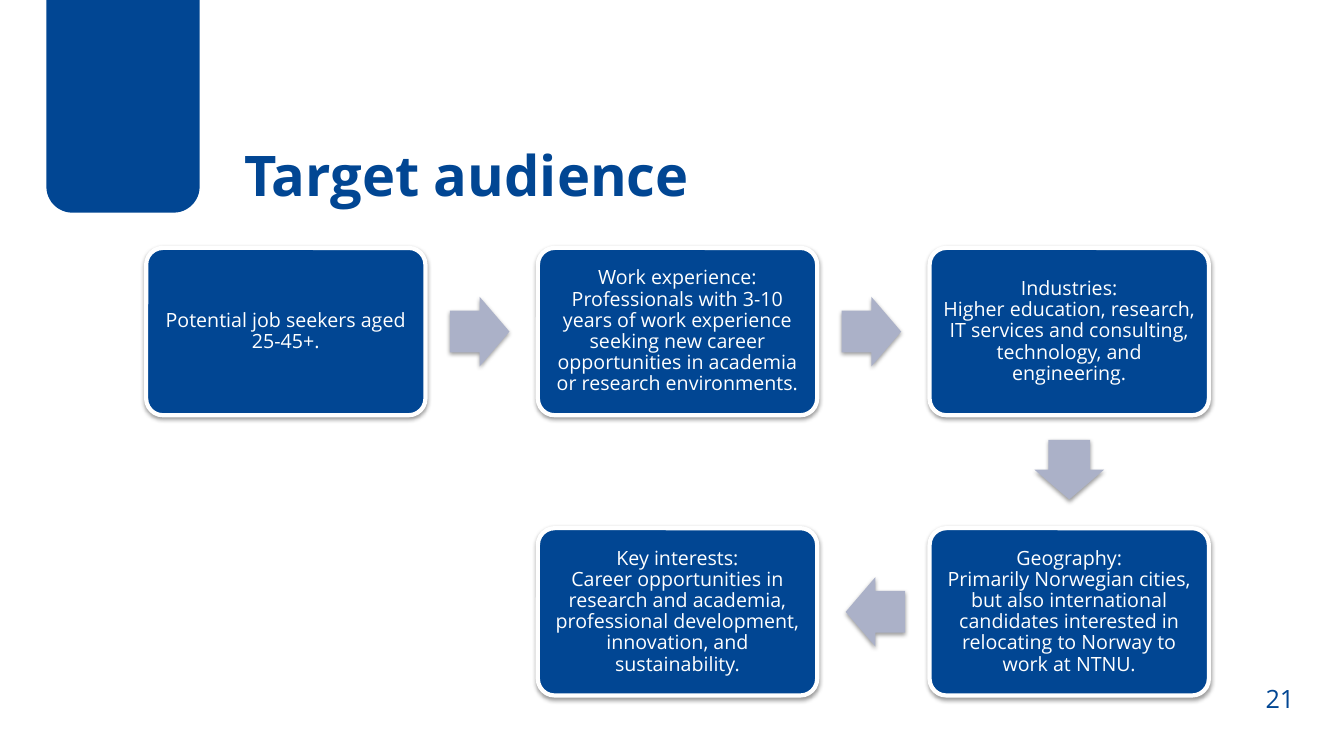
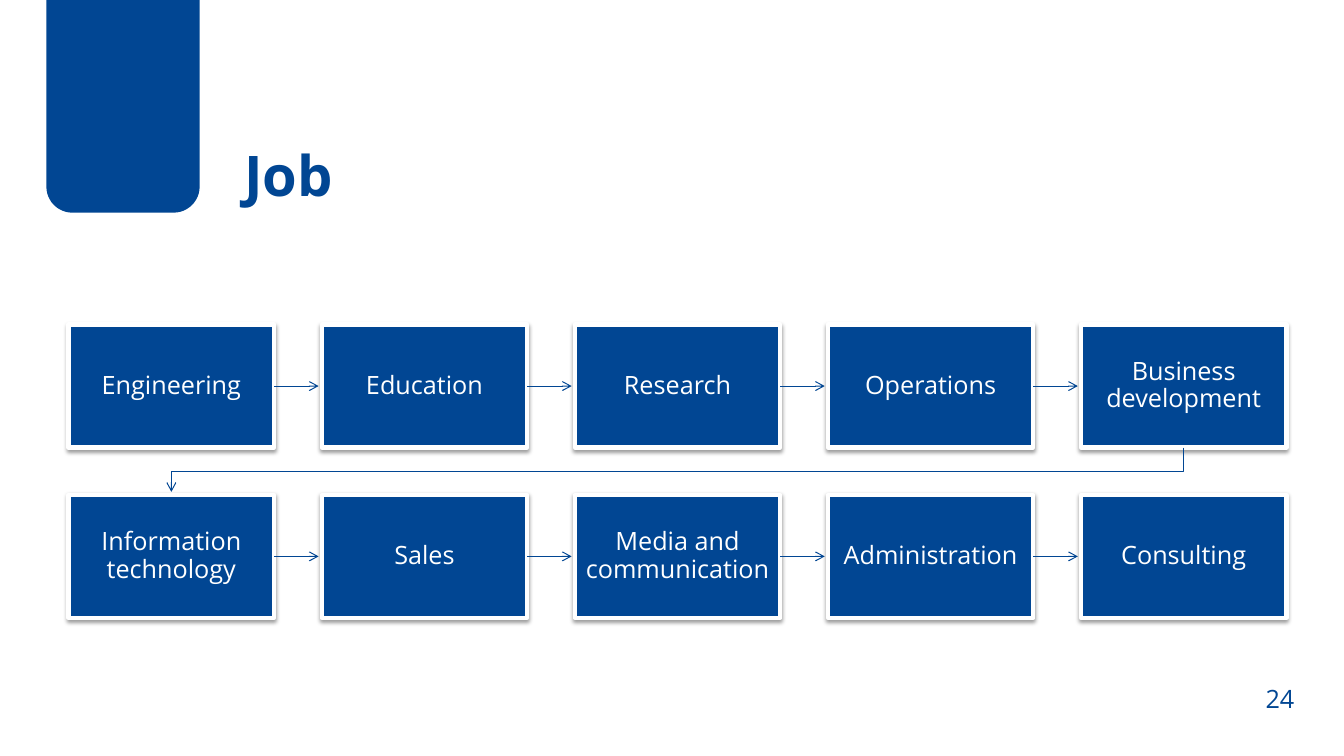
from dataclasses import dataclass

from lxml import etree
from pptx import Presentation
from pptx import util as u
from pptx.dml.color import RGBColor
from pptx.enum import shapes, text
from pptx.oxml import ns
from pptx.shapes.autoshape import Shape
from pptx.slide import Slide


@dataclass(frozen=True)
class Theme:
    blue: RGBColor = RGBColor(0x01, 0x46, 0x93)
    grey: RGBColor = RGBColor(0xAB, 0xB1, 0xC8)
    white: RGBColor = RGBColor(0xFF, 0xFF, 0xFF)
    font: str = "Open Sans"
    title_size: int = 40
    label_size: int = 18
    body_size: int = 14
    border: float = 3
    thin_line: float = 0.75


@dataclass(frozen=True)
class Box:
    """A rectangle in inches."""
    left: float
    top: float
    width: float
    height: float

    @property
    def center(self) -> tuple[float, float]:
        return self.left + self.width / 2, self.top + self.height / 2

    def lengths(self) -> tuple[u.Length, ...]:
        return tuple(u.Inches(v) for v in (self.left, self.top, self.width, self.height))


@dataclass(frozen=True)
class Step:
    col: int
    row: int
    words: str


@dataclass(frozen=True)
class Grid:
    """Equal boxes at equal steps across and down."""
    first: Box
    step_x: float
    step_y: float

    def cell(self, col: int, row: int) -> Box:
        return Box(self.first.left + col * self.step_x, self.first.top + row * self.step_y,
                   self.first.width, self.first.height)


THEME = Theme()
TITLE = Box(2.32, 0.45, 10.45, 1.66)
TAB = Box(0.46, 0, 1.52, 2.11)
PAGE_NUMBER = Box(12.37, 6.73, 0.65, 0.4)

AUDIENCE_GRID = Grid(Box(1.45, 2.46, 2.77, 1.66), 3.885, 2.78)
AUDIENCE = (
    Step(0, 0, "Potential job seekers aged 25-45+."),
    Step(1, 0, "Work experience:\nProfessionals with 3-10 years of work experience seeking "
               "new career opportunities in academia or research environments."),
    Step(2, 0, "Industries:\nHigher education, research, IT services and consulting, "
               "technology, and engineering."),
    Step(2, 1, "Geography:\nPrimarily Norwegian cities, but also international candidates "
               "interested in relocating to Norway to work at NTNU."),
    Step(1, 1, "Key interests:\nCareer opportunities in research and academia, "
               "professional development, innovation, and sustainability."),
)
ARROW_WIDTH, ARROW_HEIGHT, ARROW_LAG = 0.59, 0.69, 0.02

JOB_GRID = Grid(Box(0.68, 3.22, 2.04, 1.22), 2.51, 1.69)
JOB_ROWS = (
    ("Engineering", "Education", "Research", "Operations", "Business development"),
    ("Information technology", "Sales", "Media and communication", "Administration",
     "Consulting"),
)
TIP_GAP = 0.03  # space between an arrow tip and the next box


# Shared helpers
def add_shadow(sp: Shape) -> None:
    sp.shadow.inherit = False
    effects = sp._element.spPr.find(ns.qn("a:effectLst"))
    shadow = etree.SubElement(effects, ns.qn("a:outerShdw"), blurRad="40000", dist="20000",
                              dir="5400000", rotWithShape="0")
    color = etree.SubElement(shadow, ns.qn("a:srgbClr"), val="000000")
    etree.SubElement(color, ns.qn("a:alpha"), val="38000")


def add_filled(s: Slide, kind: shapes.MSO_SHAPE, box: Box, color: RGBColor) -> Shape:
    sp = s.shapes.add_shape(kind, *box.lengths())
    sp.shadow.inherit = False
    sp.fill.solid()
    sp.fill.fore_color.rgb = color
    sp.line.fill.background()
    return sp


def write(sp: Shape, words: str, size: int, color: RGBColor,
          align: text.PP_ALIGN = text.PP_ALIGN.CENTER, bold: bool = False):
    tf = sp.text_frame
    tf.word_wrap = True
    p = tf.paragraphs[0]
    p.text = words
    p.alignment = align
    p.font.name = THEME.font
    p.font.size = u.Pt(size)
    p.font.bold = bold
    p.font.color.rgb = color
    return p


def add_card(s: Slide, kind: shapes.MSO_SHAPE, box: Box, words: str, size: int,
             inset: float) -> Shape:
    sp = add_filled(s, kind, box, THEME.blue)
    sp.line.color.rgb = THEME.white
    sp.line.width = u.Pt(THEME.border)
    add_shadow(sp)
    tf = sp.text_frame
    tf.margin_left = tf.margin_right = tf.margin_top = tf.margin_bottom = u.Inches(inset)
    tf.vertical_anchor = text.MSO_ANCHOR.MIDDLE
    write(sp, words, size, THEME.white).line_spacing = 0.9
    return sp


def style_arrow_line(line_shape) -> None:
    line_shape.line.color.rgb = THEME.blue
    line_shape.line.width = u.Pt(THEME.thin_line)
    etree.SubElement(line_shape.line._get_or_add_ln(), ns.qn("a:tailEnd"), type="arrow")


def add_page(prs, title: str, number: int) -> Slide:
    s = prs.slides.add_slide(prs.slide_layouts[5])
    # Blue tab hanging from the top edge
    tab = add_filled(s, shapes.MSO_SHAPE.ROUND_2_SAME_RECTANGLE, TAB, THEME.blue)
    tab.adjustments[0], tab.adjustments[1] = 0, 0.17
    # Title
    sp = s.shapes.title
    sp.left, sp.top, sp.width, sp.height = TITLE.lengths()
    sp.text_frame.vertical_anchor = text.MSO_ANCHOR.BOTTOM
    sp.text_frame.auto_size = text.MSO_AUTO_SIZE.NONE
    write(sp, title, THEME.title_size, THEME.blue, text.PP_ALIGN.LEFT, bold=True)
    # Page number
    write(s.shapes.add_textbox(*PAGE_NUMBER.lengths()), str(number), THEME.label_size,
          THEME.blue)
    return s


# Target audience
def add_block_arrow(s: Slide, start: Box, end: Box) -> None:
    (x1, y1), (x2, y2) = start.center, end.center
    if abs(x2 - x1) > abs(y2 - y1):
        dx, dy, angle = (1, 0, 0) if x2 > x1 else (-1, 0, 180)
    else:
        dx, dy, angle = 0, 1, 90
    x = (x1 + x2) / 2 - ARROW_LAG * dx
    y = (y1 + y2) / 2 - ARROW_LAG * dy
    arrow = add_filled(s, shapes.MSO_SHAPE.RIGHT_ARROW,
                       Box(x - ARROW_WIDTH / 2, y - ARROW_HEIGHT / 2,
                           ARROW_WIDTH, ARROW_HEIGHT), THEME.grey)
    arrow.adjustments[0], arrow.adjustments[1] = 0.6, 0.5
    arrow.rotation = angle
    add_shadow(arrow)


def build_audience(prs) -> None:
    s = add_page(prs, "Target audience", 21)
    boxes = [AUDIENCE_GRID.cell(step.col, step.row) for step in AUDIENCE]
    for step, box in zip(AUDIENCE, boxes):
        card = add_card(s, shapes.MSO_SHAPE.ROUNDED_RECTANGLE, box, step.words,
                        THEME.body_size, 0.06)
        card.adjustments[0] = 0.1
    for start, end in zip(boxes, boxes[1:]):
        add_block_arrow(s, start, end)


# Job
def add_link(s: Slide, card: Shape, start: Box, end: Box) -> None:
    y = u.Inches(start.center[1])
    link = s.shapes.add_connector(shapes.MSO_CONNECTOR.STRAIGHT,
                                  u.Inches(start.left + start.width), y,
                                  u.Inches(end.left - TIP_GAP), y)
    link.begin_connect(card, 3)
    style_arrow_line(link)
    etree.SubElement(link._element.spPr, ns.qn("a:effectLst"))


def add_return_line(s: Slide, start: Box, end: Box) -> None:
    x1, x2 = start.center[0], end.center[0]
    top, turn, tip = start.top + start.height, 4.68, end.top - TIP_GAP
    builder = s.shapes.build_freeform(u.Inches(x1), u.Inches(top))
    corners = ((x1, turn), (x2, turn), (x2, tip))
    builder.add_line_segments([(u.Inches(x), u.Inches(y)) for x, y in corners], close=False)
    line = builder.convert_to_shape()
    line.shadow.inherit = False
    line.fill.background()
    style_arrow_line(line)


def build_job(prs) -> None:
    s = add_page(prs, "Job", 24)
    last = len(JOB_ROWS[0]) - 1
    for row, labels in enumerate(JOB_ROWS):
        for col, label in enumerate(labels):
            box = JOB_GRID.cell(col, row)
            card = add_card(s, shapes.MSO_SHAPE.RECTANGLE, box, label, THEME.label_size, 0.1)
            if col < last:
                add_link(s, card, box, JOB_GRID.cell(col + 1, row))
    add_return_line(s, JOB_GRID.cell(last, 0), JOB_GRID.cell(0, 1))


def main() -> None:
    prs = Presentation()
    prs.slide_width, prs.slide_height = u.Inches(13.33), u.Inches(7.5)
    build_audience(prs)
    build_job(prs)
    prs.save("out.pptx")


if __name__ == "__main__":
    main()
